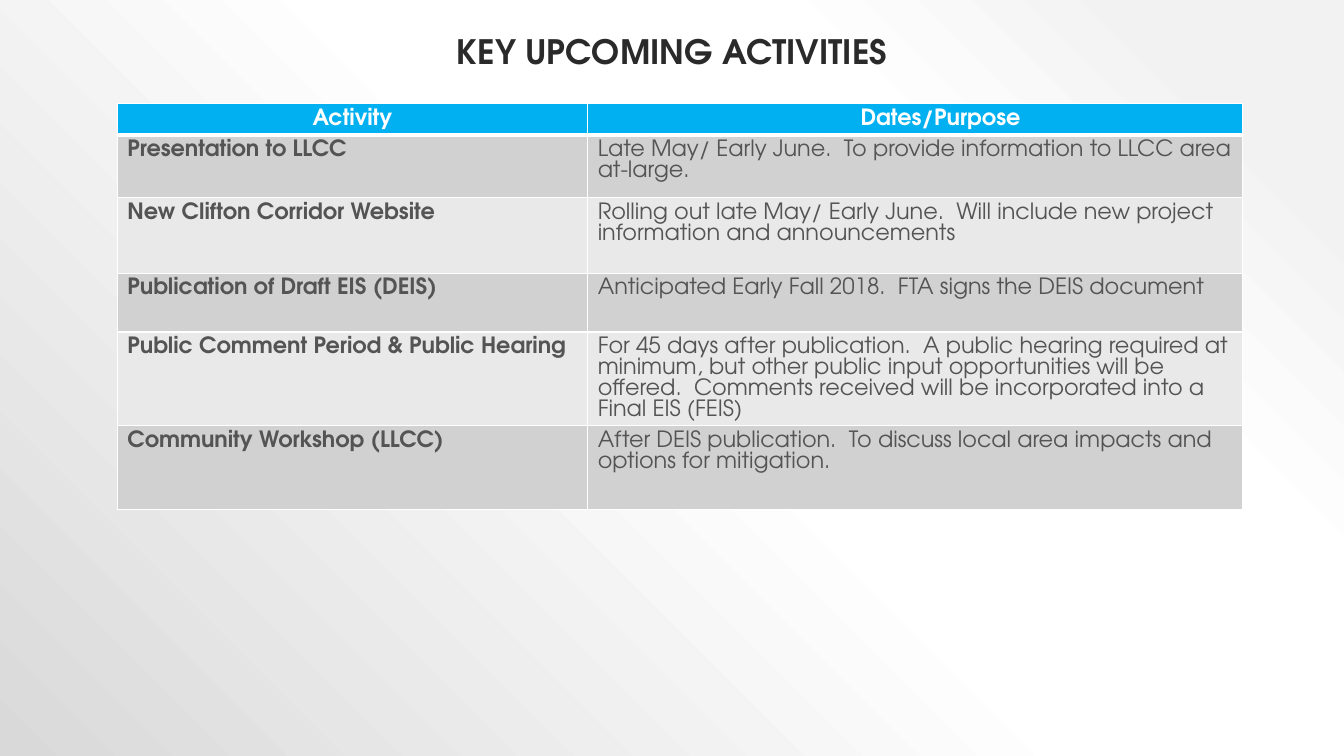
from lxml.etree import SubElement
from pptx import Presentation
from pptx.dml.color import RGBColor
from pptx.enum.text import MSO_ANCHOR, PP_ALIGN
from pptx.oxml import parse_xml
from pptx.oxml.ns import nsdecls, qn
from pptx.util import Pt

FONT = "TeX Gyre Adventor"
COLORS = {"title": "2A2A2A", "head": "00B0F0", "white": "FFFFFF",
          "text": "545454", "dark": "D1D1D1", "light": "E9E9E9"}
STOPS = [(10, "F2F2F2"), (28, "FFFFFF"), (48, "FFFFFF"), (100, "D9D9D9")]
ROWS = [
    (22, "Activity", "Dates/Purpose"),
    (45, "Presentation to LLCC",
     "Late May/ Early June.  To provide information to LLCC area at-large."),
    (54, "New Clifton Corridor Website",
     "Rolling out late May/ Early June.  Will include new project information and announcements"),
    (42, "Publication of Draft EIS (DEIS)",
     "Anticipated Early Fall 2018.  FTA signs the DEIS document"),
    (67, "Public Comment Period & Public Hearing",
     "For 45 days after publication.  A public hearing required at minimum, but other public "
     "input opportunities will be offered.  Comments received will be incorporated into a "
     "Final EIS (FEIS)"),
    (60, "Community Workshop (LLCC)",
     "After DEIS publication.  To discuss local area impacts and options for mitigation."),
]


def style(para, color, **values):
    for name, value in {"name": FONT, **values}.items():
        setattr(para.font, name, value)
    para.font.color.rgb = RGBColor.from_string(COLORS[color])


def border(cell, side, width):
    line = SubElement(cell._tc.get_or_add_tcPr(), qn(f"a:{side}"), w=str(Pt(width)))
    fill = SubElement(line, qn("a:solidFill"))
    SubElement(fill, qn("a:srgbClr"), val=COLORS["white"])


deck = Presentation()
deck.slide_width, deck.slide_height = Pt(960), Pt(540)
slide = deck.slides.add_slide(deck.slide_layouts[5])

# Background: round gradient from the top right corner
slide.background.fill.solid()
back = slide.element.find(".//" + qn("p:bgPr"))
stops = "".join(f'<a:gs pos="{pos * 1000}"><a:srgbClr val="{color}"/></a:gs>'
                for pos, color in STOPS)
back.replace(back[0], parse_xml(
    f'<a:gradFill {nsdecls("a")} rotWithShape="1"><a:gsLst>{stops}</a:gsLst>'
    '<a:path path="circle"><a:fillToRect l="100000" b="100000"/></a:path></a:gradFill>'))

# Title
title = slide.shapes.title
title.left, title.top, title.width, title.height = Pt(96), Pt(21.6), Pt(768), Pt(104.4)
title.text_frame.text = "KEY UPCOMING ACTIVITIES"
title.text_frame.vertical_anchor = MSO_ANCHOR.TOP
para = title.text_frame.paragraphs[0]
para.alignment, para.line_spacing = PP_ALIGN.CENTER, 0.9
style(para, "title", size=Pt(24), bold=True)

# Table of activities
high = sum(row[0] for row in ROWS)
table = slide.shapes.add_table(len(ROWS), 2, Pt(83.8), Pt(74.2), Pt(804), Pt(high)).table
for col, width in zip(table.columns, (336, 468)):
    col.width = Pt(width)

for r, (height, *texts) in enumerate(ROWS):
    table.rows[r].height = Pt(height)
    head = r == 0
    shade = "head" if head else ("dark" if r % 2 else "light")
    for c, text in enumerate(texts):
        cell = table.cell(r, c)
        cell.text = text
        for side in ("lnL", "lnR", "lnT", "lnB"):
            wide = (head and side == "lnB") or (r == 1 and side == "lnT")
            border(cell, side, 3 if wide else 1)
        cell.fill.solid()
        cell.fill.fore_color.rgb = RGBColor.from_string(COLORS[shade])
        para = cell.text_frame.paragraphs[0]
        para.alignment = PP_ALIGN.CENTER if head else PP_ALIGN.LEFT
        if head and c == 1:
            para.level = 1
            props = para._p.get_or_add_pPr()
            props.set("marL", str(Pt(36)))
            props.set("indent", "0")
        style(para, "white" if head else "text", size=Pt(16), bold=head or c == 0)

deck.save("out.pptx")
